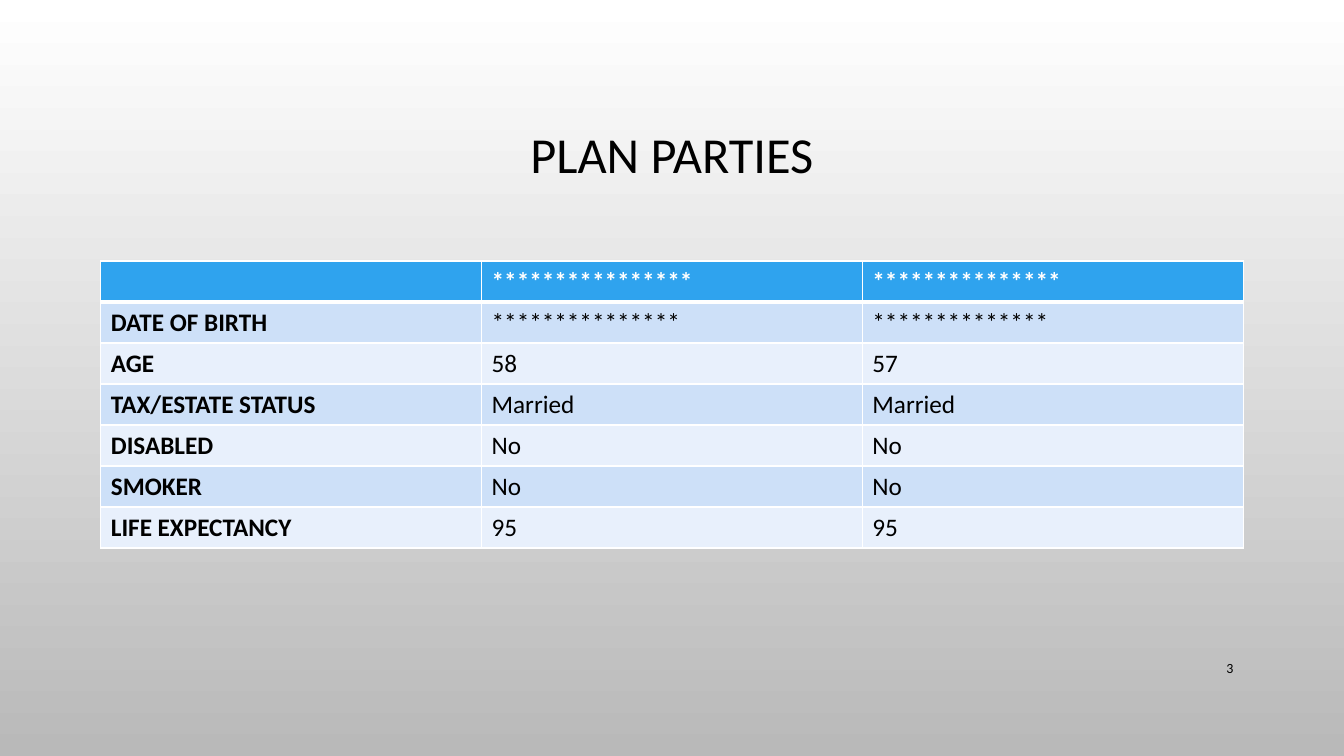
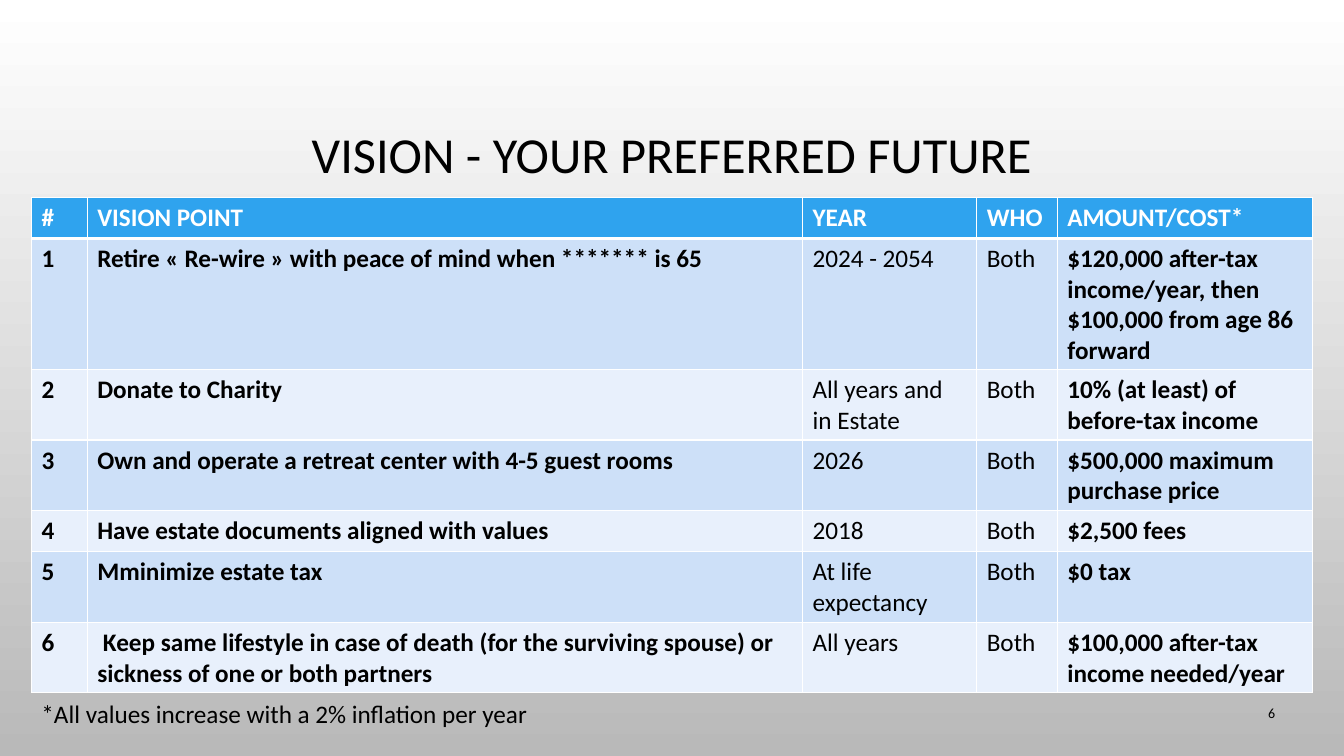
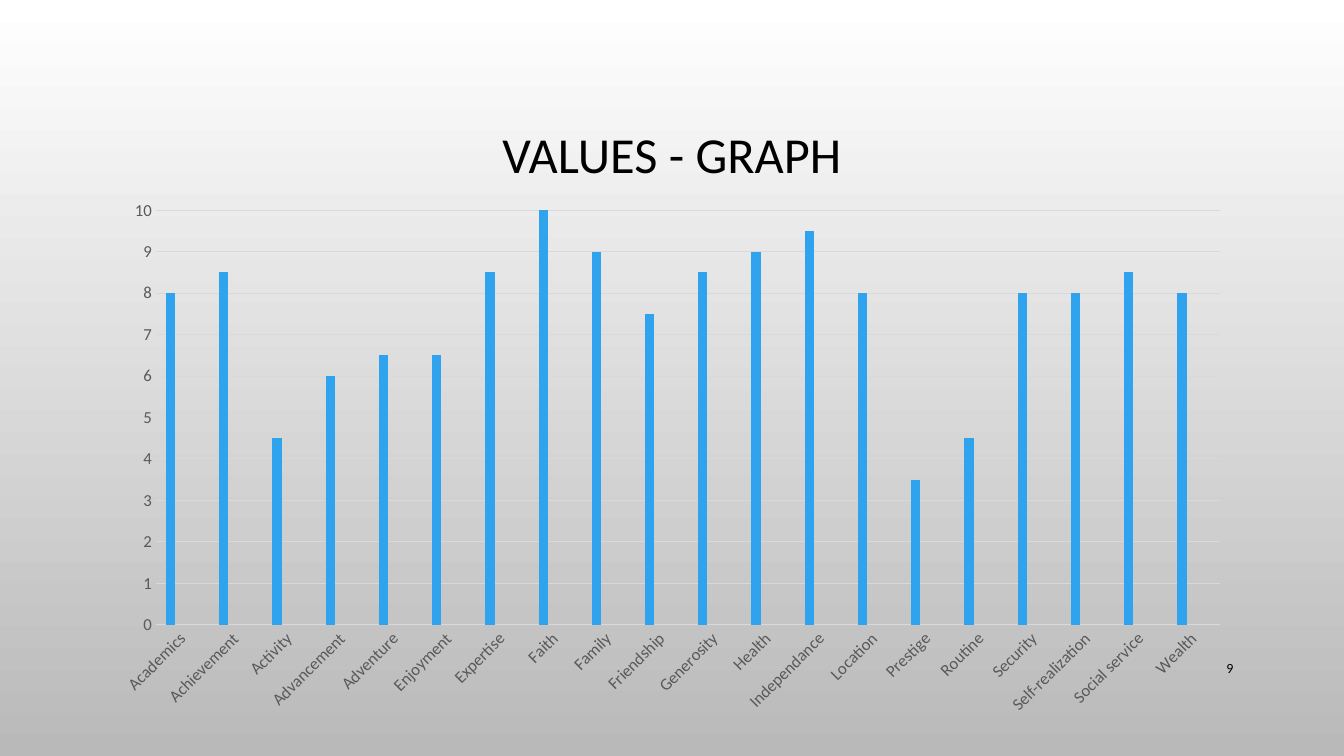
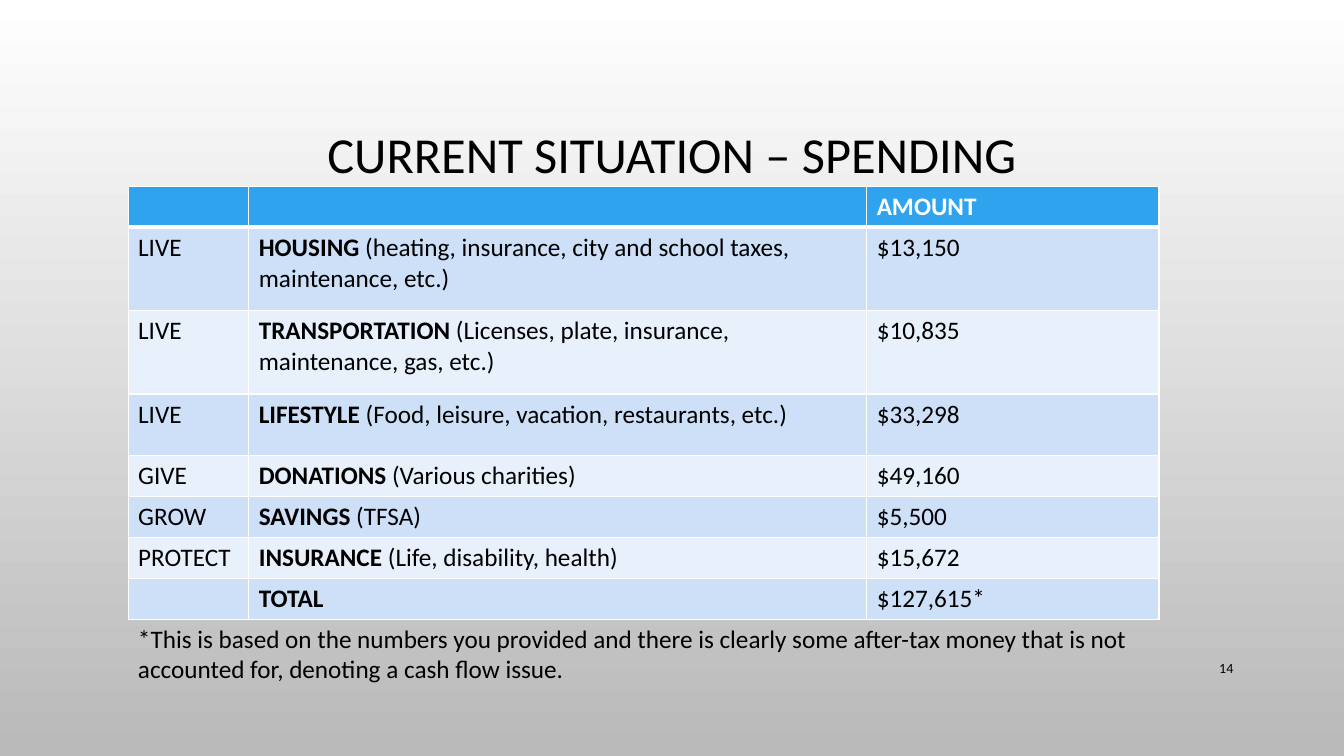
from pptx import Presentation
from pptx.chart.data import CategoryChartData
from pptx.dml.color import RGBColor
from pptx.enum.chart import XL_CHART_TYPE, XL_TICK_MARK
from pptx.enum.text import MSO_ANCHOR, PP_ALIGN
from pptx.oxml.ns import qn
from pptx.util import Pt
from lxml.etree import SubElement

FONT = "Calibri"
BLACK = RGBColor(0x00, 0x00, 0x00)
WHITE = RGBColor(0xFF, 0xFF, 0xFF)
SILVER = RGBColor(0xB9, 0xB9, 0xB9)
BLUE = RGBColor(0x2F, 0xA3, 0xEE)
TEAL = RGBColor(0x4B, 0xCA, 0xAD)
GREEN = RGBColor(0x86, 0xC1, 0x57)
BANDS = (RGBColor(0xCD, 0xE0, 0xF8), RGBColor(0xE8, 0xF0, 0xFC))
AXIS_TEXT = RGBColor(0x59, 0x59, 0x59)
GRID = RGBColor(0xD9, 0xD9, 0xD9)

ROW_HEIGHT = 29.3

PARTIES = [
    ("", "****************", "***************"),
    ("DATE OF BIRTH", "***************", "**************"),
    ("AGE", "58", "57"),
    ("TAX/ESTATE STATUS", "Married", "Married"),
    ("DISABLED", "No", "No"),
    ("SMOKER", "No", "No"),
    ("LIFE EXPECTANCY", "95", "95"),
]

VISION = [
    ("#", "VISION POINT", "YEAR", "WHO", "AMOUNT/COST*"),
    ("1", "Retire « Re-wire » with peace of mind when ******* is 65", "2024 - 2054", "Both",
     "$120,000 after-tax income/year, then $100,000 from age 86 forward"),
    ("2", "Donate to Charity", "All years and in Estate", "Both",
     "10% (at least) of before-tax income"),
    ("3", "Own and operate a retreat center with 4-5 guest rooms", "2026", "Both",
     "$500,000 maximum purchase price"),
    ("4", "Have estate documents aligned with values", "2018", "Both", "$2,500 fees"),
    ("5", "Mminimize estate tax", "At life expectancy", "Both", "$0 tax"),
    ("6", " Keep same lifestyle in case of death (for the surviving spouse) or "
     "sickness of one or both partners", "All years", "Both",
     "$100,000 after-tax income needed/year"),
]

VALUES = {
    "Academics": 8, "Achievement": 8.5, "Activity": 4.5, "Advancement": 6,
    "Adventure": 6.5, "Enjoyment": 6.5, "Expertise": 8.5, "Faith": 10,
    "Family": 9, "Friendship": 7.5, "Generosity": 8.5, "Health": 9,
    "Independance": 9.5, "Location": 8, "Prestige": 3.5, "Routine": 4.5,
    "Security": 8, "Self-realization": 8, "Social service": 8.5, "Wealth": 8,
}

SPENDING = [
    ("", "", "AMOUNT"),
    ("LIVE", ("HOUSING", " (heating, insurance, city and school taxes, maintenance, etc.)"),
     "$13,150"),
    ("LIVE", ("TRANSPORTATION", " (Licenses, plate, insurance, maintenance, gas, etc.)"),
     "$10,835"),
    ("LIVE", ("LIFESTYLE", " (Food, leisure, vacation, restaurants, etc.)"), "$33,298"),
    ("GIVE", ("DONATIONS", " (Various charities)"), "$49,160"),
    ("GROW", ("SAVINGS", " (TFSA)"), "$5,500"),
    ("PROTECT", ("INSURANCE", " (Life, disability, health)"), "$15,672"),
    ("", "TOTAL", "$127,615*"),
]


def set_font(font, size, color=BLACK, bold=None):
    font.name = FONT
    font.size = Pt(size)
    font.color.rgb = color
    font.bold = bold


def set_background(master):
    fill = master.background.fill
    fill.gradient()
    fill.gradient_angle = 270
    for stop, color in zip(fill.gradient_stops, (WHITE, SILVER)):
        stop.color.rgb = color


def add_text(s, text, box, size, align=PP_ALIGN.LEFT, anchor=MSO_ANCHOR.TOP):
    tf = s.shapes.add_textbox(*map(Pt, box)).text_frame
    tf.word_wrap = True
    tf.vertical_anchor = anchor
    p = tf.paragraphs[0]
    p.text = text
    p.alignment = align
    set_font(p.font, size)
    return p


def add_slide(prs, title, number, number_at=(828, 463)):
    s = prs.slides.add_slide(prs.slide_layouts[6])
    p = add_text(s, title, (72, 49, 816, 126), 36, PP_ALIGN.CENTER, MSO_ANCHOR.MIDDLE)
    p.line_spacing = 0.9
    add_text(s, str(number), (*number_at, 60, 28.8), 10, PP_ALIGN.RIGHT, MSO_ANCHOR.MIDDLE)
    return s


def set_borders(cell, **widths):
    tcPr = cell._tc.get_or_add_tcPr()
    for side in "LRTB":
        ln = SubElement(tcPr, qn(f"a:ln{side}"), w=str(Pt(widths.get(side, 1))))
        SubElement(SubElement(ln, qn("a:solidFill")), qn("a:srgbClr"), val=str(WHITE))


def fill_cell(cell, content, color, bold):
    """Write a string, or a (bold, regular) pair of runs."""
    p = cell.text_frame.paragraphs[0]
    if isinstance(content, tuple):
        for text, heavy in zip(content, (True, False)):
            r = p.add_run()
            r.text = text
            r.font.bold = heavy
        bold = None
    elif content:
        p.text = content
    set_font(p.font, 18, color, bold)


def add_table(s, rows, left, top, widths, bold_cols, heights=None):
    """Heights maps a row number to its height where it is not the usual one."""
    heights = [(heights or {}).get(i, ROW_HEIGHT) for i in range(len(rows))]
    table = s.shapes.add_table(len(rows), len(widths), Pt(left), Pt(top),
                               Pt(sum(widths)), Pt(sum(heights))).table
    for column, width in zip(table.columns, widths):
        column.width = Pt(width)
    for i, row in enumerate(rows):
        table.rows[i].height = Pt(heights[i])
        header = i == 0
        for j, content in enumerate(row):
            cell = table.cell(i, j)
            set_borders(cell, B=3 if header else 1, T=3 if i == 1 else 1)
            cell.fill.solid()
            cell.fill.fore_color.rgb = BLUE if header else BANDS[(i - 1) % 2]
            fill_cell(cell, content, WHITE if header else BLACK, header or j in bold_cols)


def style_line(line, color):
    line.color.rgb = color
    line.width = Pt(0.75)


def add_values_chart(s):
    data = CategoryChartData()
    data.categories = list(VALUES)
    data.add_series("Series 1", list(VALUES.values()))
    for name in ("Series 2", "Series 3"):
        data.add_series(name, [None] * len(VALUES))
    chart = s.shapes.add_chart(XL_CHART_TYPE.COLUMN_CLUSTERED, Pt(72), Pt(135.4),
                               Pt(816), Pt(383), data).chart
    chart.has_title = chart.has_legend = False
    set_font(chart.font, 10)

    plot = chart.plots[0]
    plot.vary_by_categories = False
    plot.gap_width = 219
    plot.overlap = -27
    for series, color in zip(plot.series, (BLUE, TEAL, GREEN)):
        series.format.fill.solid()
        series.format.fill.fore_color.rgb = color

    names, scale = chart.category_axis, chart.value_axis
    for axis in (names, scale):
        axis.major_tick_mark = axis.minor_tick_mark = XL_TICK_MARK.NONE
        set_font(axis.tick_labels.font, 12, AXIS_TEXT)
    style_line(names.format.line, GRID)
    names._element.find(qn("c:txPr")).find(qn("a:bodyPr")).set("rot", "-2700000")
    scale.minimum_scale, scale.maximum_scale, scale.major_unit = 0, 10, 1
    scale.format.line.fill.background()
    style_line(scale.major_gridlines.format.line, GRID)


def main():
    prs = Presentation()
    prs.slide_width, prs.slide_height = Pt(960), Pt(540)
    set_background(prs.slide_master)

    s = add_slide(prs, "PLAN PARTIES", 3)
    add_table(s, PARTIES, 72, 186.5, [272] * 3, {0})

    s = add_slide(prs, "VISION - YOUR PREFERRED FUTURE", 6, (858, 495))
    add_table(s, VISION, 22.5, 141, (39.8, 511, 124.4, 57.6, 182), {0, 1, 4})
    add_text(s, "*All values increase with a 2% inflation per year",
             (22.5, 495, 663, 29), 18)

    s = add_slide(prs, "VALUES - GRAPH", 9)
    add_values_chart(s)

    s = add_slide(prs, "CURRENT SITUATION – SPENDING", 14)
    add_table(s, SPENDING, 91.5, 133, (86.2, 441.4, 208.8), {1},
              {1: 59.6, 2: 59.6, 3: 44.2})
    add_text(s, "*This is based on the numbers you provided and there is clearly some "
             "after-tax money that is not accounted for, denoting a cash flow issue.",
             (91.5, 441.5, 736.5, 51), 18)

    prs.save("out.pptx")


if __name__ == "__main__":
    main()
